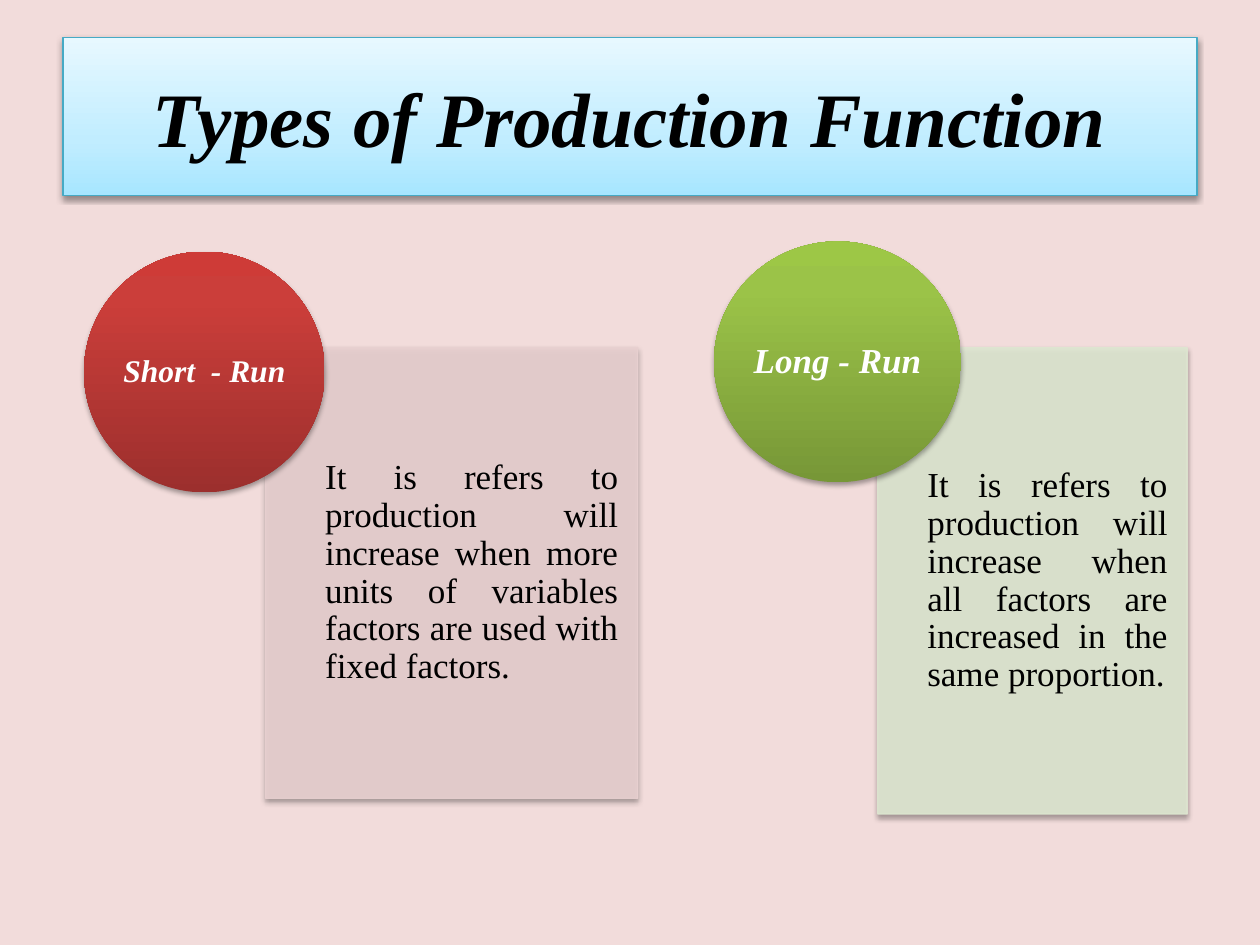
from lxml import etree
from pptx import Presentation
from pptx.dml.color import RGBColor
from pptx.enum.shapes import MSO_SHAPE
from pptx.enum.text import MSO_ANCHOR, MSO_AUTO_SIZE, PP_ALIGN
from pptx.oxml.ns import qn
from pptx.util import Pt

RECTANGLE = MSO_SHAPE.RECTANGLE
OVAL = MSO_SHAPE.OVAL
MIDDLE = MSO_ANCHOR.MIDDLE
NO_FIT = MSO_AUTO_SIZE.NONE
CENTER = PP_ALIGN.CENTER
JUSTIFY = PP_ALIGN.JUSTIFY

COLORS = {
    "background": "F2DCDB",
    "black": "000000",
    "white": "FFFFFF",
    "title_line": "46AAC5",
    "red_panel": "E8D0D0",
    "green_panel": "DEE7D1",
}
GRADIENTS = {
    "title": [(0, "A7E6FF"), (35, "C1EDFF"), (100, "E7F8FF")],
    "red": [(0, "9C2F2D"), (80, "CB3E3A"), (100, "CE3B37")],
    "green": [(0, "779737"), (80, "9BC348"), (100, "9DC746")],
}


def rgb(name):
    return RGBColor.from_string(COLORS[name])


def add_color(parent, value, alpha=None):
    color = etree.SubElement(parent, qn("a:srgbClr"), val=value)
    if alpha is not None:
        etree.SubElement(color, qn("a:alpha"), val=str(alpha * 1000))


class SlideBuilder:
    font = "Times New Roman"
    inset = 11.2

    def __init__(self, deck):
        self.page = deck.slides.add_slide(deck.slide_layouts[5])
        fill = self.page.background.fill
        fill.solid()
        fill.fore_color.rgb = rgb("background")

    def gradient(self, shape, name):
        shape.fill.gradient()
        shape.fill.gradient_angle = 90
        stops = shape._element.spPr.find(qn("a:gradFill")).find(qn("a:gsLst"))
        for stop in list(stops):
            stops.remove(stop)
        for position, value in GRADIENTS[name]:
            stop = etree.SubElement(stops, qn("a:gs"), pos=str(position * 1000))
            add_color(stop, value)

    def shadow(self, shape, distance=1.8, alpha=35):
        shape.shadow.inherit = False
        effects = shape._element.spPr.find(qn("a:effectLst"))
        outer = etree.SubElement(
            effects, qn("a:outerShdw"), blurRad=str(Pt(3.1)),
            dist=str(Pt(distance)), dir="5400000", rotWithShape="0")
        add_color(outer, COLORS["black"], alpha)

    def set_text(self, shape, text, size, color, align, bold=False):
        frame = shape.text_frame
        frame.text = text
        frame.word_wrap = True
        frame.auto_size = NO_FIT
        frame.vertical_anchor = MIDDLE
        para = frame.paragraphs[0]
        para.alignment = align
        for span in para.runs:
            span.font.name = self.font
            span.font.size = Pt(size)
            span.font.bold = span.font.italic = bold
            span.font.color.rgb = rgb(color)
        return frame

    def title(self, text, left, top, width, height):
        box = self.page.shapes.title
        box.left, box.top, box.width, box.height = map(Pt, (left, top, width, height))
        self.gradient(box, "title")
        box.line.color.rgb = rgb("title_line")
        box.line.width = Pt(0.75)
        self.shadow(box, 1.6, 38)
        self.set_text(box, text, 44, "black", CENTER, bold=True)

    def panel(self, color, left, top, width, height):
        box = self.page.shapes.add_shape(RECTANGLE, *map(Pt, (left, top, width, height)))
        box.fill.solid()
        box.fill.fore_color.rgb = rgb(color)
        box.line.color.rgb = rgb(color)
        box.line.width = Pt(0.75)
        for value in box._element.spPr.iter(qn("a:srgbClr")):
            etree.SubElement(value, qn("a:alpha"), val="90000")
        self.shadow(box)

    def circle(self, gradient, left, top, width, height):
        oval = self.page.shapes.add_shape(OVAL, *map(Pt, (left, top, width, height)))
        self.gradient(oval, gradient)
        oval.line.fill.background()
        self.shadow(oval)

    def label(self, text, size, color, align, left, top, width, height, inset=0, bold=False):
        box = self.page.shapes.add_textbox(*map(Pt, (left, top, width, height)))
        frame = self.set_text(box, text, size, color, align, bold)
        frame.margin_left = 0
        frame.margin_top = frame.margin_right = frame.margin_bottom = Pt(inset)
        frame.paragraphs[0].line_spacing = 0.9

    def run_type(self, name, name_size, text, hue, panel, text_left, circle):
        left, top, width, height = panel
        self.panel(f"{hue}_panel", *panel)
        self.label(text, 20, "black", JUSTIFY, text_left, top,
                   left + width - text_left, height, self.inset)
        self.circle(hue, *circle)
        left, top, width, height = circle
        self.label(name, name_size, "white", CENTER, left + 20.2, top + 20.2,
                   width - 40.4, height - 40.4, bold=True)


def main():
    deck = Presentation()
    deck.slide_width, deck.slide_height = Pt(720), Pt(540)
    builder = SlideBuilder(deck)
    builder.title("Types of Production Function", 36, 21.6, 648, 90)
    builder.run_type(
        "Short  - Run", 18,
        "It is refers to production will increase when more units of "
        "variables factors are used with fixed factors.",
        "red", (151.7, 198.6, 212.8, 257.6), 185.8, (48, 143.8, 137.6, 137.6))
    builder.run_type(
        "Long - Run", 20,
        "It is refers to production will increase when all factors are "
        "increased in the same proportion.",
        "green", (501.6, 198.6, 176.8, 266.6), 529.9, (408, 138, 141.2, 137.6))
    deck.save("out.pptx")


if __name__ == "__main__":
    main()
